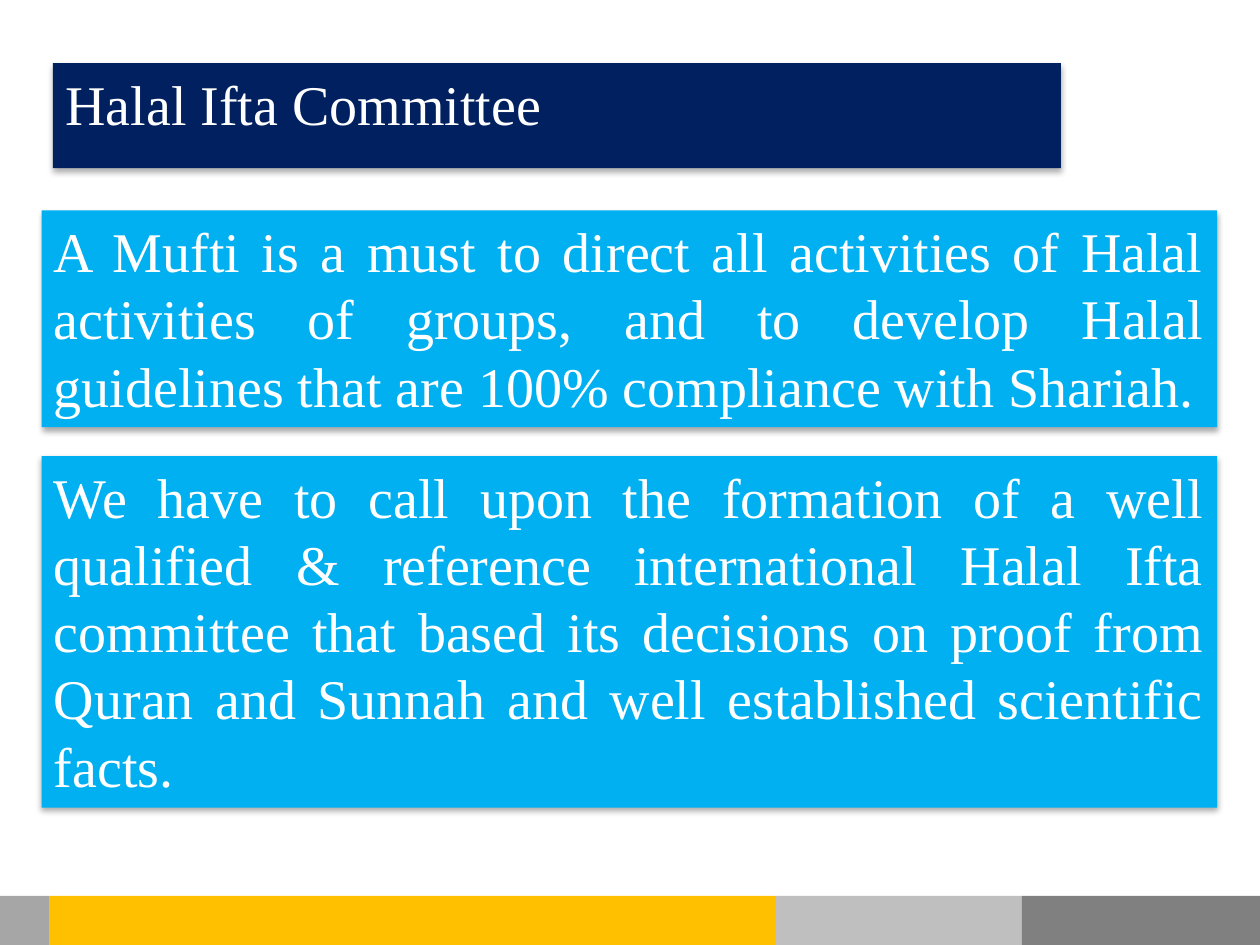
from lxml import etree
from pptx import Presentation
from pptx.dml.color import RGBColor
from pptx.enum import shapes, text
from pptx.oxml import ns
from pptx.util import Inches, Pt

WHITE = RGBColor(0xFF, 0xFF, 0xFF)
NAVY = RGBColor(0x00, 0x20, 0x60)
SKY = RGBColor(0x00, 0xB0, 0xF0)
GOLD = RGBColor(0xFF, 0xC0, 0x00)
PALE = RGBColor(0xBF, 0xBF, 0xBF)
MID = RGBColor(0xA6, 0xA6, 0xA6)
DARK = RGBColor(0x80, 0x80, 0x80)
FONT = "Times New Roman"


def paint(shape, color):
    shape.fill.solid()
    shape.fill.fore_color.rgb = color
    shape.line.fill.background()
    shape.shadow.inherit = False


def add_rect(slide, left, top, width, height, color):
    rect = slide.shapes.add_shape(
        shapes.MSO_SHAPE.RECTANGLE,
        Inches(left), Inches(top), Inches(width), Inches(height))
    paint(rect, color)
    return rect


def add_shadow(shape):
    effects = shape._element.spPr.find(ns.qn("a:effectLst"))
    outer = etree.SubElement(
        effects, ns.qn("a:outerShdw"), blurRad=str(Pt(3.5)),
        dist=str(Pt(2.2)), dir="5400000", rotWithShape="0")
    black = etree.SubElement(outer, ns.qn("a:srgbClr"), val="000000")
    etree.SubElement(black, ns.qn("a:alpha"), val="32000")


def write(shape, words, size=32, color=WHITE, align=text.PP_ALIGN.JUSTIFY):
    frame = shape.text_frame
    frame.word_wrap = True
    frame.auto_size = text.MSO_AUTO_SIZE.SHAPE_TO_FIT_TEXT
    frame.vertical_anchor = text.MSO_ANCHOR.TOP
    para = frame.paragraphs[0]
    para.alignment = align
    run = para.add_run()
    run.text = words
    run.font.name = FONT
    run.font.size = Pt(size)
    run.font.color.rgb = color


def add_title(slide, left, top, width, height, words):
    title = slide.shapes.title
    title.left, title.top = Inches(left), Inches(top)
    title.width, title.height = Inches(width), Inches(height)
    paint(title, NAVY)
    add_shadow(title)
    write(title, words)


def add_panel(slide, left, top, width, height, words):
    panel = add_rect(slide, left, top, width, height, SKY)
    add_shadow(panel)
    write(panel, words)


def add_footer(slide, left, top, width, height):
    # Each band runs from its start to the start of the next
    bands = [(0, MID), (0.39, GOLD), (6.16, PALE), (8.11, DARK)]
    ends = [start for start, _ in bands[1:]] + [width]
    for (start, color), end in zip(bands, ends):
        add_rect(slide, left + start, top, end - start, height, color)


def main():
    deck = Presentation()
    deck.slide_width, deck.slide_height = Inches(10), Inches(7.5)
    slide = deck.slides.add_slide(deck.slide_layouts[5])

    # Heading
    add_title(slide, 0.42, 0.5, 8, 0.64, "Halal Ifta Committee")

    # Statements
    add_panel(slide, 0.33, 1.67, 9.33, 1.72,
              "A Mufti is a must to direct all activities of Halal activities "
              "of groups, and to develop Halal guidelines that are 100% "
              "compliance with Shariah.")
    add_panel(slide, 0.33, 3.62, 9.33, 2.79,
              "We have to call upon the formation of a well qualified & "
              "reference international Halal Ifta committee that based its "
              "decisions on proof from Quran and Sunnah and well established "
              "scientific facts.")

    # Footer strip
    add_footer(slide, 0, 7.11, 10, 0.39)
    deck.save("out.pptx")


if __name__ == "__main__":
    main()
